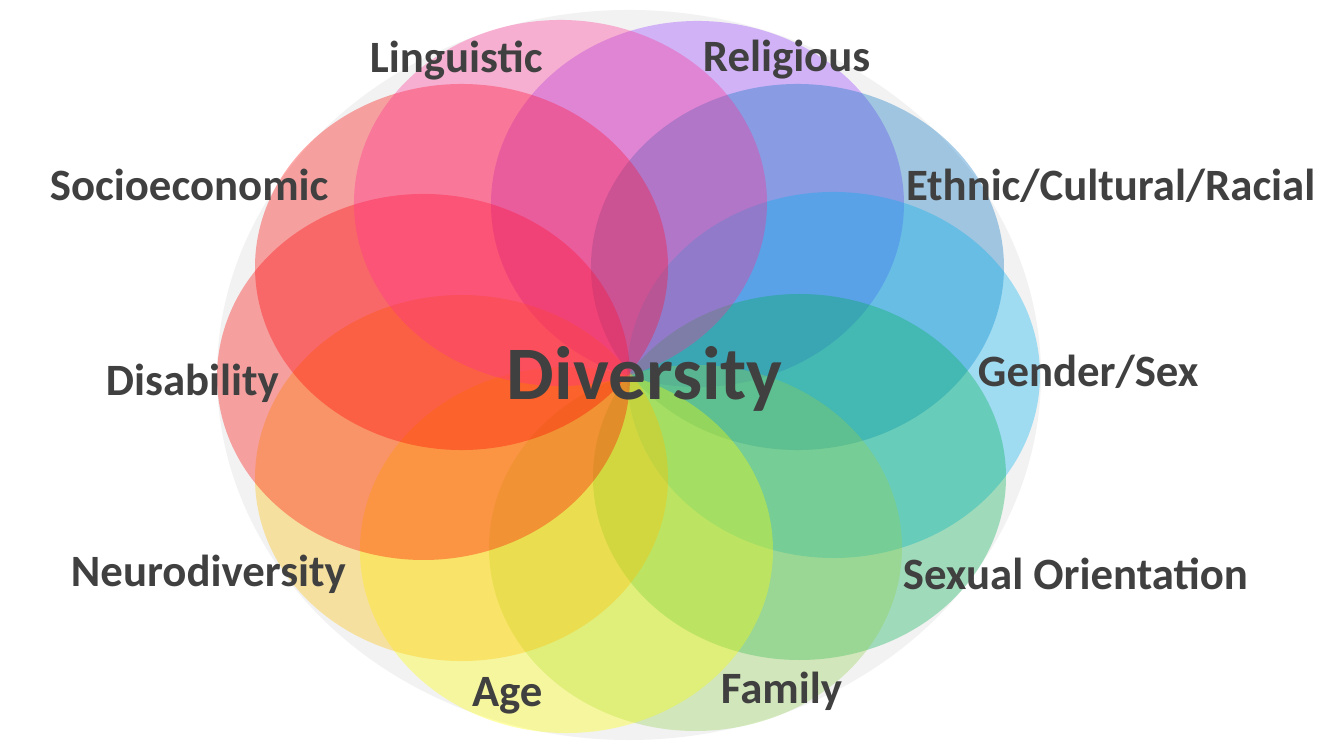
from lxml import etree
from pptx import Presentation
from pptx.dml.color import RGBColor
from pptx.enum.shapes import MSO_SHAPE
from pptx.enum.text import MSO_ANCHOR, MSO_AUTO_SIZE, PP_ALIGN
from pptx.oxml.ns import qn
from pptx.util import Pt

OVAL = MSO_SHAPE.OVAL
TOP = MSO_ANCHOR.TOP
GROW = MSO_AUTO_SIZE.SHAPE_TO_FIT_TEXT
LEFT, CENTER = PP_ALIGN.LEFT, PP_ALIGN.CENTER

INK = RGBColor(0x40, 0x40, 0x40)
PALE = RGBColor(0xF2, 0xF2, 0xF2)
VIOLET = RGBColor(0x94, 0x37, 0xFF)
BLUE = RGBColor(0x00, 0x70, 0xC0)
SKY = RGBColor(0x00, 0xB0, 0xF0)
GREEN = RGBColor(0x00, 0xB0, 0x50)
LIME = RGBColor(0x92, 0xD0, 0x50)
YELLOW = RGBColor(0xFF, 0xFF, 0x00)
AMBER = RGBColor(0xFF, 0xC0, 0x00)
RED = RGBColor(0xFF, 0x00, 0x00)
PINK = RGBColor(0xFF, 0x2F, 0x92)

WIDE, HIGH = 1344, 756
SCALE = 914400 / 100.8
DISC = (217, 10, 824, 730)
PETAL = (413, 366)
ALPHA = 34
PETALS = [
    (491, 21, VIOLET),
    (591, 84, BLUE),
    (627, 192, SKY),
    (593, 294, GREEN),
    (489, 365, LIME),
    (360, 367, YELLOW),
    (255, 295, AMBER),
    (217, 194, RED),
    (255, 84, RED),
    (354, 20, PINK),
]
LABEL_H = 54
LABELS = [
    ("Linguistic", 370, 28, 241),
    ("Religious", 703, 27, 241),
    ("Ethnic/Cultural/Racial", 906, 156, 438),
    ("Gender/Sex", 978, 342, 301),
    ("Sexual Orientation", 903, 545, 441),
    ("Disability", 106, 351, 301),
    ("Age", 472, 662, 109),
    ("Neurodiversity", 71, 542, 358),
    ("Socioeconomic", 50, 156, 310),
    ("Family", 721, 659, 163),
]
TITLE = ("Diversity", 477, 324, 336, 92)
FRAME = {
    "margin_left": 0, "margin_top": 0, "margin_right": 0, "margin_bottom": 0,
    "word_wrap": True, "auto_size": GROW, "vertical_anchor": TOP,
}
FONT = {"name": "Calibri", "bold": True}


def px(*nums):
    return [round(num * SCALE) for num in nums]


def apply(thing, style):
    for key, value in style.items():
        setattr(thing, key, value)


def add_oval(group, box, color, alpha=None):
    oval = group.shapes.add_shape(OVAL, *px(*box))
    oval.shadow.inherit = False
    oval.fill.solid()
    oval.fill.fore_color.rgb = color
    oval.line.fill.background()
    if alpha:
        tint = oval.element.spPr.find(qn("a:solidFill"))[0]
        etree.SubElement(tint, qn("a:alpha"), val=str(alpha * 1000))


def write(shape, text, size, align):
    frame = shape.text_frame
    apply(frame, FRAME)
    para = frame.paragraphs[0]
    para.alignment = align
    run = para.add_run()
    run.text = text
    apply(run.font, FONT | {"size": Pt(size)})
    run.font.color.rgb = INK


def main():
    deck = Presentation()
    deck.slide_width, deck.slide_height = px(WIDE, HIGH)
    slide = deck.slides.add_slide(deck.slide_layouts[5])
    flower = slide.shapes.add_group_shape()
    add_oval(flower, DISC, PALE)
    for left, top, color in PETALS:
        add_oval(flower, (left, top, *PETAL), color, ALPHA)
    for text, left, top, width in LABELS:
        label = slide.shapes.add_textbox(*px(left, top, width, LABEL_H))
        write(label, text, 32, LEFT)
    text, *box = TITLE
    title = slide.shapes.title
    apply(title, dict(zip(("left", "top", "width", "height"), px(*box))))
    write(title, text, 54, CENTER)
    slide.shapes.element.append(title.element)
    deck.save("out.pptx")


if __name__ == "__main__":
    main()
